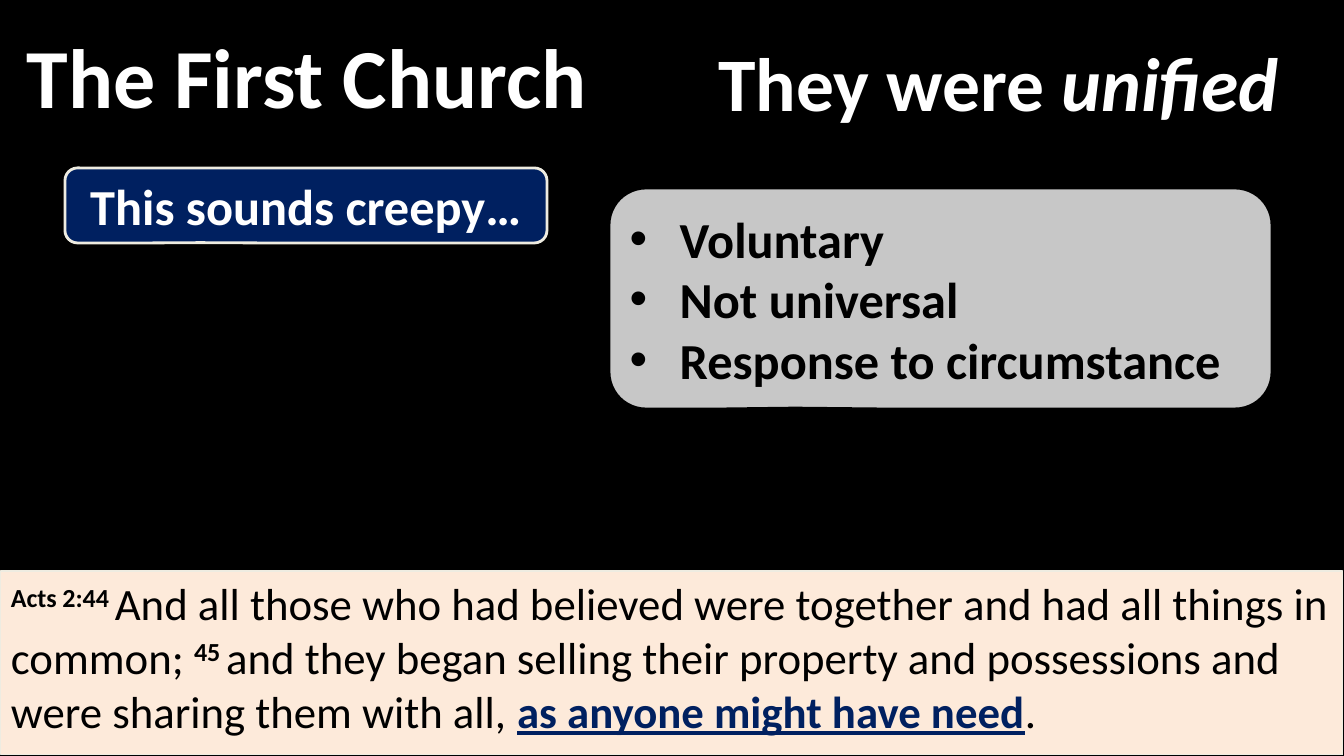
from lxml import etree
from pptx import Presentation
from pptx.dml.color import RGBColor
from pptx.enum.shapes import MSO_SHAPE
from pptx.enum.text import MSO_ANCHOR, PP_ALIGN
from pptx.oxml.ns import qn
from pptx.util import Emu, Pt

PX = 914400 / 100.8
WHITE, BLACK, NAVY, CREAM = "FFFFFF", "000000", "002060", "EEECE1"

# Content: each paragraph is a list of (text, style) runs
VERSE = {"bold": True, "base": 30}
PASSAGE = [[
    ("Acts 2:44 ", VERSE),
    ("And all those who had believed were together and had all things in common; ", {}),
    ("45 ", VERSE),
    ("and they began selling their property and possessions and were sharing them with all, ", {}),
    ("as anyone might have need", {"bold": True, "underline": True, "color": NAVY}),
    (". ", {}),
]]
BOLD = {"bold": True}
TITLE = [[("The First Church", BOLD)]]
TOPIC = [[("They were ", BOLD), ("unified ", {"bold": True, "italic": True})]]
REMARK = [[("This sounds creepy…", BOLD)]]
POINTS = [[(t, BOLD)] for t in ("Voluntary", "Not universal", "Response to circumstance")]

# Callouts: box in px, paragraphs, size, text colour, fill, line, opacity %, bulleted
CALLOUTS = [
    ((0, 33, 613, 84), TITLE, 60, WHITE, None, None, 100, False),
    ((688, 39, 638, 85), TOPIC, 54, WHITE, None, None, 100, False),
    ((65, 168, 482, 75), REMARK, 36, WHITE, NAVY, CREAM, 100, False),
    ((609, 188, 663, 221), POINTS, 36, BLACK, WHITE, BLACK, 78, True),
]


def px(n):
    return Emu(round(n * PX))


def rgb(value):
    return RGBColor.from_string(value)


def add_box(s, kind, box, fill, line, width, opacity=100):
    sp = s.shapes.add_shape(kind, *map(px, box))
    sp.shadow.inherit = False
    if fill:
        sp.fill.solid()
        sp.fill.fore_color.rgb = rgb(fill)
        if opacity < 100:
            clr = sp.fill._xPr.find(".//" + qn("a:srgbClr"))
            etree.SubElement(clr, qn("a:alpha")).set("val", str(opacity * 1000))
    else:
        sp.fill.background()
    if line:
        sp.line.color.rgb = rgb(line)
        sp.line.width = Pt(width)
    else:
        sp.line.fill.background()
    return sp


def add_bullet(p, indent):
    pPr = p._p.get_or_add_pPr()
    pPr.set("marL", str(indent))
    pPr.set("indent", str(-indent))
    etree.SubElement(pPr, qn("a:buFont")).set("typeface", "Arial")
    etree.SubElement(pPr, qn("a:buChar")).set("char", "•")


def write(sp, paragraphs, size, color, align, anchor, bulleted=False):
    tf = sp.text_frame
    tf.word_wrap = True
    tf.vertical_anchor = anchor
    for i, runs in enumerate(paragraphs):
        p = tf.add_paragraph() if i else tf.paragraphs[0]
        p.alignment = align
        if bulleted:
            add_bullet(p, px(50))
        for text, style in runs:
            r = p.add_run()
            r.text = text
            r.font.name = "Calibri"
            r.font.size = Pt(size)
            r.font.color.rgb = rgb(style.get("color", color))
            r.font.bold = style.get("bold", False)
            r.font.italic = style.get("italic", False)
            r.font.underline = style.get("underline", False)
            if "base" in style:
                r.font._element.set("baseline", str(style["base"] * 1000))


def main():
    prs = Presentation()
    prs.slide_width, prs.slide_height = px(1344), px(756)
    s = prs.slides.add_slide(prs.slide_layouts[6])
    s.background.fill.solid()
    s.background.fill.fore_color.rgb = rgb(BLACK)

    # Scripture band
    band = add_box(s, MSO_SHAPE.RECTANGLE, (1, 571, 1342, 184), "FDEADA", CREAM, 0.75)
    write(band, PASSAGE, 32, BLACK, PP_ALIGN.LEFT, MSO_ANCHOR.TOP)

    # Headings, remark and points
    for box, paragraphs, size, color, fill, line, opacity, bulleted in CALLOUTS:
        sp = add_box(s, MSO_SHAPE.ROUNDED_RECTANGULAR_CALLOUT, box, fill, line, 2, opacity)
        for i, value in enumerate((-0.22, 0.496, 0.167)):
            sp.adjustments[i] = value
        align = PP_ALIGN.LEFT if bulleted else PP_ALIGN.CENTER
        write(sp, paragraphs, size, color, align, MSO_ANCHOR.MIDDLE, bulleted)

    prs.save("out.pptx")


if __name__ == "__main__":
    main()
